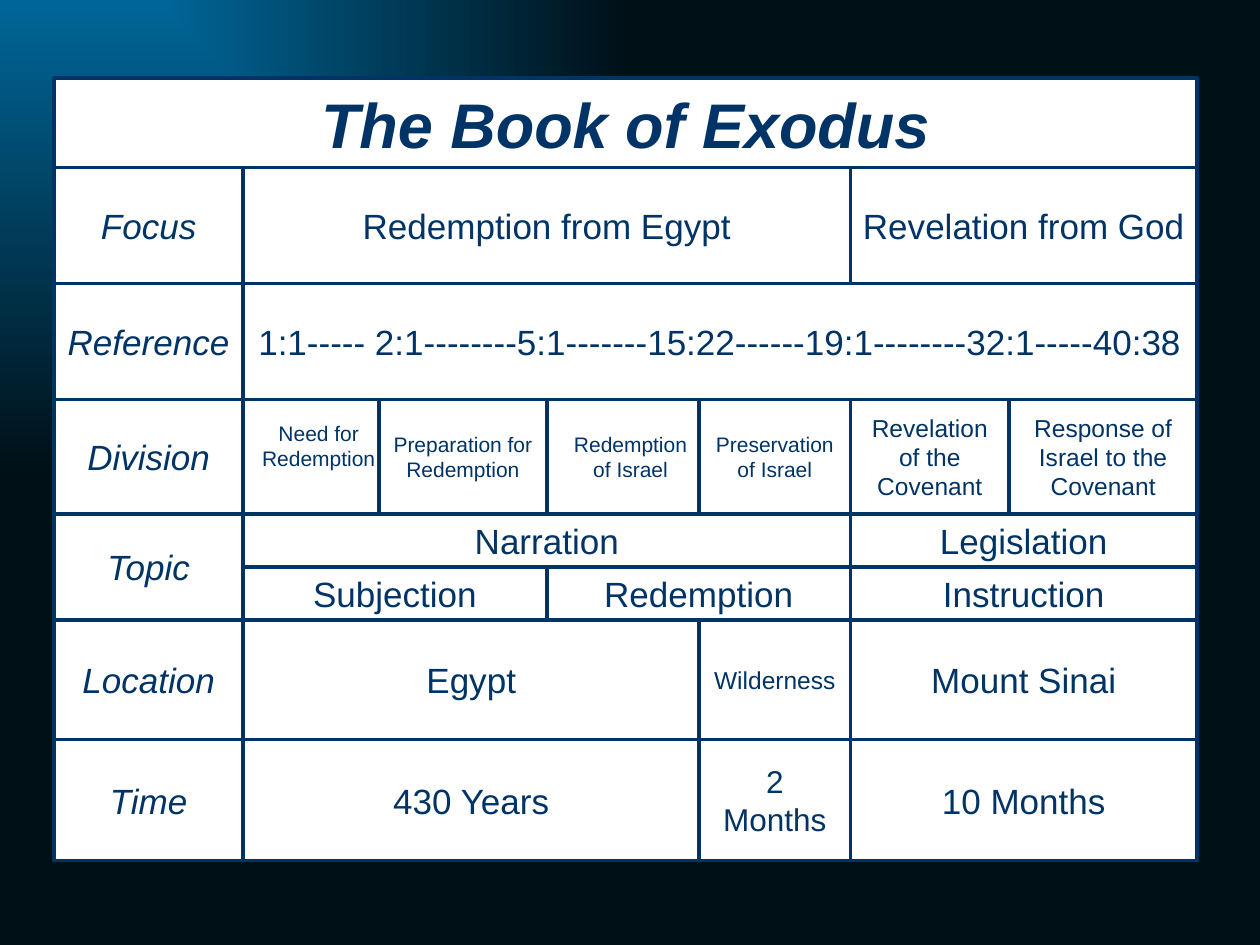
import pptx
import pptx.util
import pptx.dml.color
import pptx.enum.shapes
import pptx.enum.text
import pptx.oxml
import pptx.oxml.ns

Inches = pptx.util.Inches
RGBColor = pptx.dml.color.RGBColor
NAVY = RGBColor(0x00, 0x33, 0x66)
WHITE = RGBColor(0xFF, 0xFF, 0xFF)
BLUE = RGBColor(0x00, 0x66, 0x99)
BLACK = RGBColor(0x00, 0x10, 0x17)

LEFT, HEAD, PREP, MID, LATE, LAW, REPLY, RIGHT = 0.43, 1.93, 3.01, 4.34, 5.55, 6.75, 8.01, 9.5
TOP, FOCUS, REF, DIV, TOPIC, SUB, PLACE, TIME, END = 0.62, 1.33, 2.25, 3.17, 4.08, 4.5, 4.92, 5.87, 6.83
LAP = 0.12


def style(box, text, size, slant=False, bold=False):
    box.fill.solid()
    box.fill.fore_color.rgb = WHITE
    box.line.color.rgb = NAVY
    box.line.width = pptx.util.Pt(2)
    frame = box.text_frame
    frame.word_wrap = True
    frame.auto_size = pptx.enum.text.MSO_AUTO_SIZE.NONE
    frame.vertical_anchor = pptx.enum.text.MSO_ANCHOR.MIDDLE
    for i, line in enumerate(text.split("\n")):
        para = frame.add_paragraph() if i else frame.paragraphs[0]
        para.alignment = pptx.enum.text.PP_ALIGN.CENTER
        run = para.add_run()
        run.text = line
        run.font.name = "Arial"
        run.font.size = pptx.util.Pt(size)
        run.font.color.rgb = NAVY
        run.font.italic = slant
        run.font.bold = bold


def cell(left, right, top, base, text, size=20, slant=False):
    box = slide.shapes.add_shape(
        pptx.enum.shapes.MSO_SHAPE.RECTANGLE,
        Inches(left), Inches(top), Inches(right - left), Inches(base - top))
    box.shadow.inherit = False
    style(box, text, size, slant)
    return box


deck = pptx.Presentation()
deck.slide_width = Inches(10)
deck.slide_height = Inches(7.5)
slide = deck.slides.add_slide(deck.slide_layouts[5])

back = slide.background.fill
back.gradient()
for stop, color, place in zip(back.gradient_stops, (BLUE, BLACK), (0, 1)):
    stop.color.rgb = color
    stop.position = place
lin = slide.element.find(".//" + pptx.oxml.ns.qn("a:lin"))
lin.getparent().replace(lin, pptx.oxml.parse_xml(
    f'<a:path {pptx.oxml.ns.nsdecls("a")} path="rect">'
    '<a:fillToRect r="100000" b="100000"/></a:path>'))

title = slide.shapes.title
title.left, title.top = Inches(LEFT), Inches(TOP)
title.width, title.height = Inches(RIGHT - LEFT), Inches(FOCUS - TOP)
style(title, "The Book of Exodus", 36, slant=True, bold=True)

names = ["Focus", "Reference", "Division", "Topic", "Location", "Time"]
edges = [FOCUS, REF, DIV, TOPIC, PLACE, TIME, END]
for name, top, base in zip(names, edges, edges[1:]):
    cell(LEFT, HEAD, top, base, name, slant=True)

cell(HEAD, LAW, FOCUS, REF, "Redemption from Egypt")
cell(LAW, RIGHT, FOCUS, REF, "Revelation from God")
cell(HEAD, RIGHT, REF, DIV,
     "1:1----- 2:1--------5:1-------15:22------19:1--------32:1-----40:38")

need = cell(HEAD, PREP + LAP, DIV, TOPIC, "Need for Redemption", 12)
need.text_frame.margin_bottom = Inches(0.23)
cell(PREP, MID, DIV, TOPIC, "Preparation for Redemption", 12)
cell(MID, LATE + LAP, DIV, TOPIC, "Redemption\nof Israel", 12)
cell(LATE, LAW, DIV, TOPIC, "Preservation of Israel", 12)
cell(LAW, REPLY, DIV, TOPIC, "Revelation of the Covenant", 14)
cell(REPLY, RIGHT, DIV, TOPIC, "Response of Israel to the Covenant", 14)

cell(HEAD, LAW, TOPIC, SUB, "Narration")
cell(LAW, RIGHT, TOPIC, SUB, "Legislation")
cell(HEAD, MID, SUB, PLACE, "Subjection")
cell(MID, LAW, SUB, PLACE, "Redemption")
cell(LAW, RIGHT, SUB, PLACE, "Instruction")

cell(HEAD, LATE, PLACE, TIME, "Egypt")
cell(LATE, LAW, PLACE, TIME, "Wilderness", 14)
cell(LAW, RIGHT, PLACE, TIME, "Mount Sinai")

cell(HEAD, LATE, TIME, END, "430 Years")
cell(LATE, LAW, TIME, END, "2 Months", 18)
cell(LAW, RIGHT, TIME, END, "10 Months")

deck.save("out.pptx")
